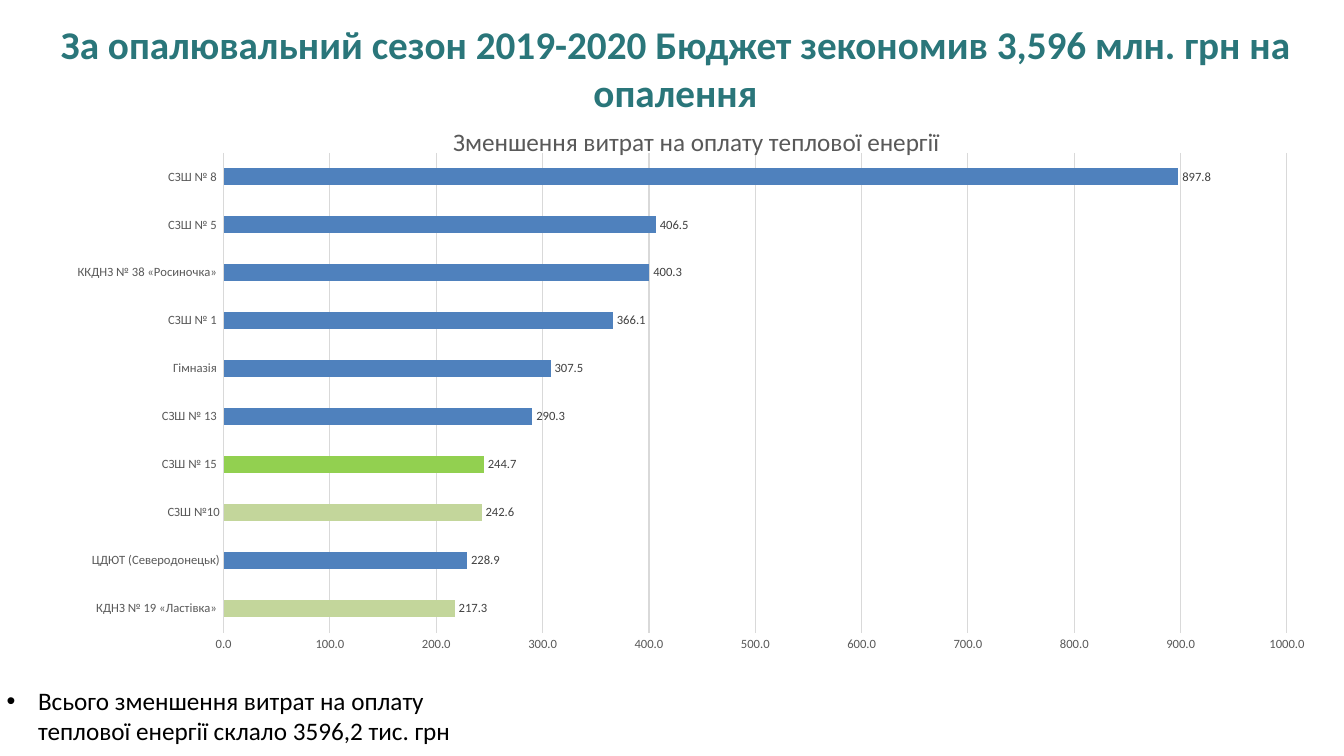
from lxml import etree
from pptx import Presentation
from pptx.chart.data import CategoryChartData
from pptx.dml.color import RGBColor
from pptx.enum.chart import XL_CHART_TYPE as ChartType
from pptx.enum.chart import XL_LABEL_POSITION as LabelPos
from pptx.enum.chart import XL_TICK_MARK as TickMark
from pptx.enum.text import MSO_ANCHOR as Anchor
from pptx.enum.text import PP_ALIGN as Align
from pptx.oxml import parse_xml
from pptx.oxml.ns import nsdecls, qn
from pptx.util import Cm, Pt

FONT = "Calibri"
COLORS = {
    "title": "2A767A",
    "text": "000000",
    "axis": "595959",
    "label": "404040",
    "grid": "D9D9D9",
    "bar": "4F81BD",
    "pale": "C3D69B",
    "bright": "92D050",
}
SAVINGS = [
    ("КДНЗ № 19 «Ластівка» ", 217.3, "pale"),
    ("ЦДЮТ (Северодонецьк)", 228.9, "bar"),
    ("СЗШ №10", 242.6, "pale"),
    ("СЗШ № 15 ", 244.7, "bright"),
    ("СЗШ № 13 ", 290.3, "bar"),
    ("Гімназія ", 307.5, "bar"),
    ("СЗШ № 1 ", 366.1, "bar"),
    ("ККДНЗ № 38 «Росиночка» ", 400.3, "bar"),
    ("СЗШ № 5 ", 406.5, "bar"),
    ("СЗШ № 8 ", 897.8, "bar"),
]


def rgb(name):
    return RGBColor.from_string(COLORS[name])


def style_font(font, size, color, bold=False):
    font.name = FONT
    font.size = Pt(size)
    font.bold = bold
    font.color.rgb = rgb(color)


def add_text(slide, text, left, top, width, height, size, color, bold=False):
    tf = slide.shapes.add_textbox(Cm(left), Cm(top), Cm(width), Cm(height)).text_frame
    tf.word_wrap = True
    tf.text = text
    style_font(tf.paragraphs[0].runs[0].font, size, color, bold)
    return tf


def add_bullet(p, indent):
    pPr = p._p.get_or_add_pPr()
    pPr.set("marL", str(indent))
    pPr.set("indent", str(-indent))
    etree.SubElement(pPr, qn("a:buFont")).set("typeface", "Arial")
    etree.SubElement(pPr, qn("a:buChar")).set("char", "•")


def make_layout(inner=False, **fractions):
    """Manual chart layout in fractions of the chart's size."""
    target = '<c:layoutTarget val="inner"/>' if inner else ""
    modes = "".join(f'<c:{k}Mode val="edge"/>' for k in "xy")
    values = "".join(f'<c:{k} val="{v}"/>' for k, v in fractions.items())
    return parse_xml(
        f'<c:layout {nsdecls("c")}><c:manualLayout>{target}{modes}{values}'
        "</c:manualLayout></c:layout>"
    )


def set_layout(parent, layout, index):
    for old in parent.findall(qn("c:layout")):
        parent.remove(old)
    parent.insert(index, layout)


def style_axis(axis):
    axis.major_tick_mark = axis.minor_tick_mark = TickMark.NONE
    style_font(axis.tick_labels.font, 9, "axis")


def style_line(line):
    line.color.rgb = rgb("grid")
    line.width = Pt(0.75)


def add_savings_chart(slide):
    data = CategoryChartData(number_format="0.0")
    data.categories = [name for name, _, _ in SAVINGS]
    data.add_series("Series 1", [value for _, value, _ in SAVINGS])
    chart = slide.shapes.add_chart(
        ChartType.BAR_CLUSTERED, Cm(1.32), Cm(2.13), Cm(32.21), Cm(14.6), data
    ).chart
    style_font(chart.font, 10, "text")
    chart.has_legend = False

    chart.has_title = True
    title = chart.chart_title
    title.text_frame.text = "Зменшення витрат на оплату теплової енергії"
    style_font(title.text_frame.paragraphs[0].runs[0].font, 18, "axis")
    title.include_in_layout = False
    set_layout(title._element, make_layout(x=0.31, y=0.06), 1)
    plot_area = chart._chartSpace.chart.plotArea
    set_layout(plot_area, make_layout(True, x=0.134, y=0.118, w=0.832, h=0.828), 0)

    style_axis(chart.category_axis)
    style_line(chart.category_axis.format.line)
    axis = chart.value_axis
    style_axis(axis)
    axis.minimum_scale, axis.maximum_scale, axis.major_unit = 0, 1000, 100
    axis.format.line.fill.background()
    style_line(axis.major_gridlines.format.line)
    axis.tick_labels.number_format = "0.0"
    axis.tick_labels.number_format_is_linked = False

    plot = chart.plots[0]
    plot.gap_width = 182
    plot.vary_by_categories = False
    series = plot.series[0]
    series.format.fill.solid()
    series.format.fill.fore_color.rgb = rgb("bar")
    for i, (_, _, color) in enumerate(SAVINGS):
        if color != "bar":
            fill = series.points[i].format.fill
            fill.solid()
            fill.fore_color.rgb = rgb(color)

    labels = series.data_labels
    labels.show_value = True
    labels.position = LabelPos.OUTSIDE_END
    labels.number_format = "0.0"
    labels.number_format_is_linked = False
    style_font(labels.font, 9, "label")


def main():
    prs = Presentation()
    prs.slide_width, prs.slide_height = Cm(33.87), Cm(19.05)
    slide = prs.slides.add_slide(prs.slide_layouts[6])

    add_savings_chart(slide)
    heading = add_text(
        slide,
        "За опалювальний сезон 2019-2020 Бюджет зекономив 3,596 млн. грн на опалення",
        0.33, 0.81, 33.38, 1.8, 28, "title", bold=True,
    )
    heading.vertical_anchor = Anchor.MIDDLE
    heading.paragraphs[0].alignment = Align.CENTER
    total = add_text(
        slide,
        "Всього зменшення витрат на оплату теплової енергії склало 3596,2 тис. грн",
        -0.08, 17.15, 12.6, 1.8, 18, "text",
    )
    add_bullet(total.paragraphs[0], Cm(0.79))
    prs.save("out.pptx")


if __name__ == "__main__":
    main()
